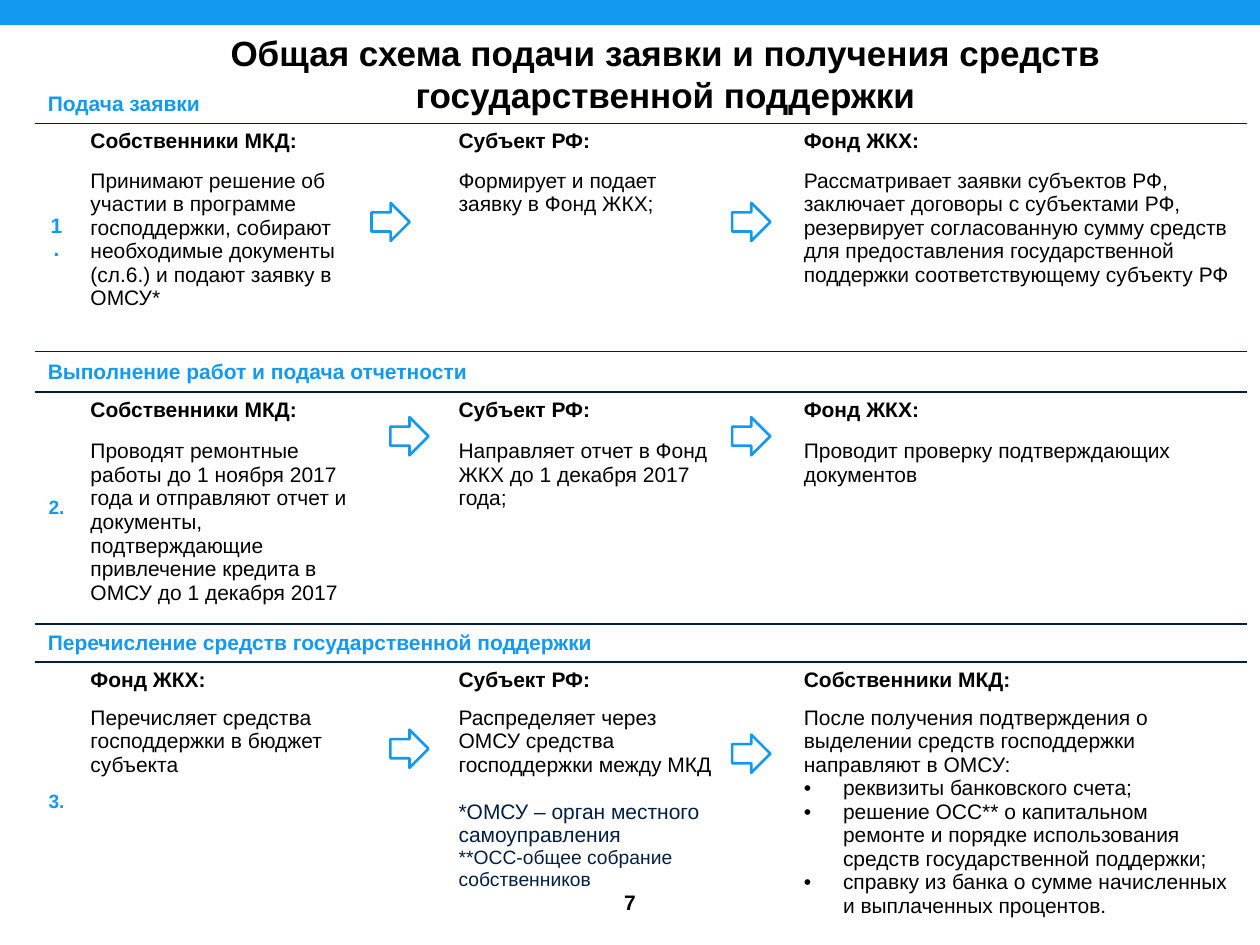
from lxml import etree
from pptx import Presentation
from pptx.dml.color import RGBColor
from pptx.enum.shapes import MSO_SHAPE as Preset
from pptx.enum.text import MSO_ANCHOR as Anchor, PP_ALIGN as Align
from pptx.oxml.ns import qn
from pptx.util import Cm, Pt

BLUE, NAVY, BLACK = "139AF0", "021F43", "000000"
COLUMNS = [0.86, 6.25, 1.17, 5.74, 1.22, 9.19]
ROWS = [0.79, 0.79, 3.81, 0.81, 0.84, 3.84, 0.76, 0.76, 4.88]
RULED_ROWS = {0, 2, 3, 5, 6}  # rows with a line below them
ARROWS = [(7.49, 4.09), (14.76, 4.09), (7.87, 8.41), (14.76, 8.41),
          (7.87, 14.71), (14.76, 14.81)]

# Stage heading, number size, then (participant, actions) for each column
STAGES = [
    ("Подача заявки", 12, [
        ("Собственники МКД:", ["Принимают решение об участии в программе господдержки, собирают "
                               "необходимые документы (сл.6.) и подают заявку в ОМСУ*"]),
        ("Субъект РФ:", ["Формирует и подает заявку в Фонд ЖКХ;"]),
        ("Фонд ЖКХ:", ["Рассматривает заявки субъектов РФ, заключает договоры с субъектами РФ, "
                       "резервирует согласованную сумму средств для предоставления "
                       "государственной поддержки соответствующему субъекту РФ"]),
    ]),
    ("Выполнение работ и подача отчетности", 11, [
        ("Собственники МКД:", ["Проводят ремонтные работы до 1 ноября 2017 года и отправляют "
                               "отчет и документы, подтверждающие привлечение кредита в ОМСУ "
                               "до 1 декабря 2017"]),
        ("Субъект РФ:", ["Направляет отчет в Фонд ЖКХ до 1 декабря 2017 года;"]),
        ("Фонд ЖКХ:", ["Проводит проверку подтверждающих документов"]),
    ]),
    ("Перечисление средств государственной поддержки", 11, [
        ("Фонд ЖКХ:", ["Перечисляет средства господдержки в бюджет субъекта"]),
        ("Субъект РФ:", ["Распределяет через ОМСУ средства господдержки между МКД"]),
        ("Собственники МКД:", ["После получения подтверждения о выделении средств господдержки "
                               "направляют в ОМСУ:"]),
    ]),
]
FOOTNOTES = [("*ОМСУ – орган местного самоуправления", 12),
             ("**ОСС-общее собрание собственников", 11)]
DOCUMENTS = ["реквизиты банковского счета;",
             "решение ОСС** о капитальном ремонте и порядке использования средств "
             "государственной поддержки;",
             "справку из банка о сумме начисленных и выплаченных процентов."]


def color(value):
    return RGBColor.from_string(value)


def write(paragraph, text, size=12, ink=BLACK, bold=False, align=Align.LEFT):
    paragraph.text = text
    paragraph.alignment = align
    for run in paragraph.runs:
        run.font.name = "Arial"
        run.font.size = Pt(size)
        run.font.bold = bold
        run.font.color.rgb = color(ink)


def add_bullet(paragraph):
    props = paragraph._p.get_or_add_pPr()
    props.set("marL", str(Cm(0.79)))
    props.set("indent", str(-Cm(0.79)))
    etree.SubElement(props, qn("a:buFont")).set("typeface", "Arial")
    etree.SubElement(props, qn("a:buChar")).set("char", "•")


def set_edge(cell, side, ruled):
    edge = etree.SubElement(cell._tc.get_or_add_tcPr(), qn(f"a:ln{side}"))
    if ruled:
        edge.set("w", str(Pt(1)))
        fill = etree.SubElement(edge, qn("a:solidFill"))
        etree.SubElement(fill, qn("a:srgbClr")).set("val", NAVY)
    else:
        etree.SubElement(edge, qn("a:noFill"))


def add_label(slide, text, size, left, top, width, height):
    frame = slide.shapes.add_textbox(Cm(left), Cm(top), Cm(width), Cm(height)).text_frame
    frame.word_wrap = True
    frame.vertical_anchor = Anchor.MIDDLE
    write(frame.paragraphs[0], text, size, bold=True, align=Align.CENTER)


def add_band(slide, left, top, width, height):
    band = slide.shapes.add_shape(Preset.RECTANGLE, Cm(left), Cm(top), Cm(width), Cm(height))
    band.shadow.inherit = False
    band.fill.solid()
    band.fill.fore_color.rgb = color(BLUE)
    band.line.fill.background()


def add_arrow(slide, left, top, size):
    arrow = slide.shapes.add_shape(Preset.RIGHT_ARROW, Cm(left), Cm(top), Cm(size), Cm(size))
    arrow.shadow.inherit = False
    arrow.fill.background()
    arrow.line.color.rgb = color(BLUE)
    arrow.line.width = Pt(1.5)


def fill_stage(table, index, heading, number_size, participants):
    top = 3 * index
    title = table.cell(top, 0)
    title.merge(table.cell(top, len(COLUMNS) - 1))
    title.vertical_anchor = Anchor.MIDDLE
    write(title.text_frame.paragraphs[0], heading, ink=BLUE, bold=True)

    number = table.cell(top + 1, 0)
    number.merge(table.cell(top + 2, 0))
    number.vertical_anchor = Anchor.MIDDLE
    write(number.text_frame.paragraphs[0], f"{index + 1}.", number_size, BLUE, True, Align.CENTER)

    for column, (name, actions) in zip((1, 3, 5), participants):
        write(table.cell(top + 1, column).text_frame.paragraphs[0], name, bold=True)
        for action in actions:
            write(table.cell(top + 2, column).text_frame.paragraphs[0], action)


def add_details(table):
    notes = table.cell(8, 3).text_frame
    for position, (note, size) in enumerate(FOOTNOTES):
        paragraph = notes.add_paragraph()
        write(paragraph, note, size, NAVY)
        if position == 0:
            paragraph.space_before = Pt(13.5)
    documents = table.cell(8, 5).text_frame
    for document in DOCUMENTS:
        paragraph = documents.add_paragraph()
        add_bullet(paragraph)
        write(paragraph, document)


def style_cells(table):
    for row in range(len(ROWS)):
        for column in range(len(COLUMNS)):
            cell = table.cell(row, column)
            last_row = row + cell.span_height - 1
            for side, ruled in (("L", False), ("R", False), ("T", row - 1 in RULED_ROWS),
                                ("B", last_row in RULED_ROWS)):
                set_edge(cell, side, ruled)
            cell.fill.background()
            if not cell.text_frame.text:
                # Small empty cells keep their rows low
                end = etree.SubElement(cell.text_frame.paragraphs[0]._p, qn("a:endParaRPr"))
                end.set("sz", "1200")


def add_scheme(slide, left, top):
    table = slide.shapes.add_table(len(ROWS), len(COLUMNS), Cm(left), Cm(top),
                                   Cm(sum(COLUMNS)), Cm(sum(ROWS))).table
    table.first_row = table.horz_banding = False
    for column, width in zip(table.columns, COLUMNS):
        column.width = Cm(width)
    for row, height in zip(table.rows, ROWS):
        row.height = Cm(height)
    for index, stage in enumerate(STAGES):
        fill_stage(table, index, *stage)
    add_details(table)
    style_cells(table)


def main():
    deck = Presentation()
    deck.slide_width, deck.slide_height = Cm(25.4), Cm(19.05)
    slide = deck.slides.add_slide(deck.slide_layouts[6])

    # Top band, page number and title
    add_band(slide, 0, 0, 25.4, 0.51)
    add_label(slide, "7", 12, 11.58, 17.7, 2.24, 0.99)
    add_label(slide, "Общая схема подачи заявки и получения средств государственной поддержки",
              20, 2.01, 0.51, 22.81, 1.96)

    # Stages and the arrows between participants
    add_scheme(slide, 0.71, 1.7)
    for left, top in ARROWS:
        add_arrow(slide, left, top, 0.77)

    deck.save("out.pptx")


if __name__ == "__main__":
    main()
